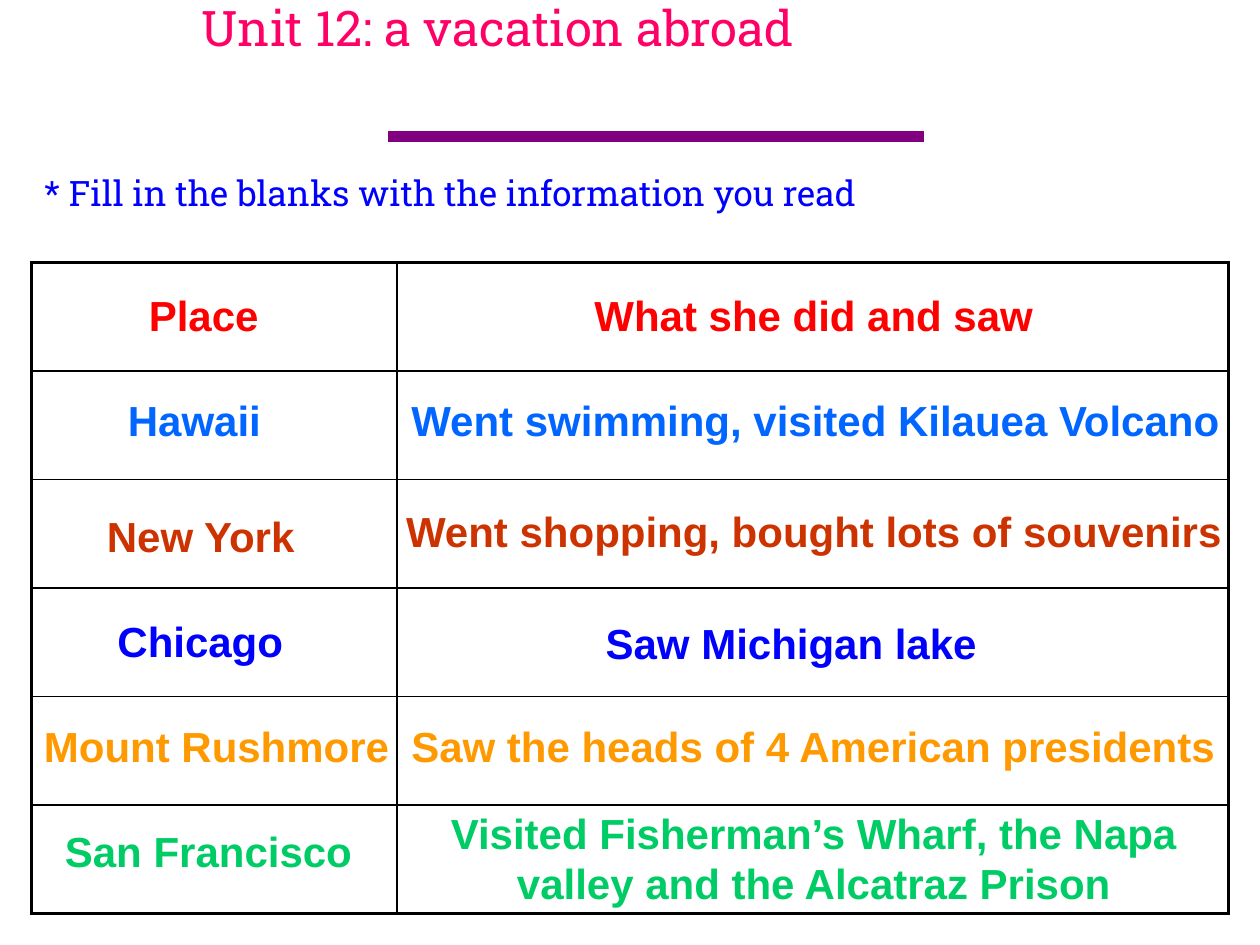
"""Build the worksheet slide for Unit 12, a vacation abroad."""
from lxml.etree import SubElement
from pptx import Presentation
from pptx.dml.color import RGBColor
from pptx.enum.shapes import MSO_CONNECTOR
from pptx.enum.text import MSO_ANCHOR as Anchor, MSO_AUTO_SIZE as AutoSize, PP_ALIGN as Align
from pptx.oxml.ns import qn
from pptx.util import Inches, Pt

PINK = RGBColor(0xFF, 0x00, 0x66)
PURPLE = RGBColor(0x80, 0x00, 0x80)
BLUE = RGBColor(0x00, 0x00, 0xFF)
RED = RGBColor(0xFF, 0x00, 0x00)
SKY = RGBColor(0x00, 0x66, 0xFF)
RUST = RGBColor(0xCC, 0x33, 0x00)
ORANGE = RGBColor(0xFF, 0x99, 0x00)
GREEN = RGBColor(0x00, 0xCC, 0x66)
BLACK = RGBColor(0x00, 0x00, 0x00)

GRID_COLUMNS, GRID_ROWS = 120, 90
LEFT, CENTER = Align.LEFT, Align.CENTER

ENTRIES = [
    ("Place", RED, (13, 27, 19, 6), LEFT),
    ("What she did and saw", RED, (40, 27, 75, 6), CENTER),
    ("Hawaii", SKY, (11, 37, 16, 6), LEFT),
    ("Went swimming, visited Kilauea Volcano", SKY, (38, 37, 81, 6), LEFT),
    ("New York", RUST, (9, 48, 21, 6), LEFT),
    ("Went shopping, bought lots of souvenirs", RUST, (37.5, 47.6, 83, 6), LEFT),
    ("Chicago", BLUE, (10, 58, 32, 6), LEFT),
    ("Saw Michigan lake", BLUE, (56.5, 58.2, 51, 6), LEFT),
    ("Mount Rushmore", ORANGE, (3, 68, 38, 6), LEFT),
    ("Saw the heads of 4 American presidents", ORANGE, (38, 68, 83, 6), LEFT),
    ("San Francisco", GREEN, (5, 78, 34, 6), LEFT),
    ("Visited Fisherman’s Wharf, the Napa valley and the Alcatraz Prison",
     GREEN, (37, 76.3, 81, 10.8), CENTER),
]


def write(shape, text, *, color, size=24, font="Arial", bold=True, align=LEFT):
    """Fill a shape with one formatted paragraph."""
    frame = shape.text_frame
    frame.word_wrap = True
    frame.auto_size = AutoSize.NONE
    frame.vertical_anchor = Anchor.TOP
    para = frame.paragraphs[0]
    para.alignment = align
    span = para.add_run()
    span.text = text
    span.font.name, span.font.size, span.font.bold = font, Pt(size), bold
    span.font.color.rgb = color


def draw_border(cell, side, width):
    """Draw one side of a table cell."""
    line = SubElement(cell._tc.get_or_add_tcPr(), qn(f"a:ln{side}"), w=str(Pt(width)))
    fill = SubElement(line, qn("a:solidFill"))
    SubElement(fill, qn("a:srgbClr"), val=str(BLACK))


class Worksheet:
    """Hold the deck, its grid and the current page."""

    heading_font = "Roboto Slab"
    thick, thin = 2.25, 1

    def __init__(self):
        """Open a deck with one title-only page."""
        self.deck = Presentation()
        self.deck.slide_width, self.deck.slide_height = Inches(10), Inches(7.5)
        self.page = self.deck.slides.add_slide(self.deck.slide_layouts[5])

    def across(self, columns):
        """Turn grid columns into a length."""
        return round(self.deck.slide_width * columns / GRID_COLUMNS)

    def down(self, rows):
        """Turn grid rows into a length."""
        return round(self.deck.slide_height * rows / GRID_ROWS)

    def area(self, left, top, width, height):
        """Turn a grid area into lengths."""
        return self.across(left), self.down(top), self.across(width), self.down(height)

    def title(self, text, area, color):
        """Move and fill the title placeholder."""
        box = self.page.shapes.title
        box.left, box.top, box.width, box.height = self.area(*area)
        write(box, text, color=color, size=28, font=self.heading_font, bold=False)

    def text(self, text, area, **style):
        """Add a text box."""
        write(self.page.shapes.add_textbox(*self.area(*area)), text, **style)

    def rule(self, left, right, row, color, width):
        """Add a horizontal line."""
        height = self.down(row)
        line = self.page.shapes.add_connector(
            MSO_CONNECTOR.STRAIGHT, self.across(left), height, self.across(right), height)
        line.line.color.rgb, line.line.width = color, Pt(width)
        SubElement(line._element.spPr, qn("a:effectLst"))

    def table(self, area, widths, row_count):
        """Add an empty ruled table with a thick outline."""
        last_row, last_column = row_count - 1, len(widths) - 1
        grid = self.page.shapes.add_table(row_count, len(widths), *self.area(*area)).table
        grid.first_row = grid.horz_banding = False
        for column, width in zip(grid.columns, widths):
            column.width = self.across(width)
        for row in range(row_count):
            for column in range(len(widths)):
                cell = grid.cell(row, column)
                outer = {"L": column == 0, "R": column == last_column,
                         "T": row == 0, "B": row == last_row}
                for side, is_outer in outer.items():
                    draw_border(cell, side, self.thick if is_outer else self.thin)
                cell.fill.background()


def main():
    """Build and save the worksheet."""
    sheet = Worksheet()
    sheet.title("Unit 12: a vacation abroad", (18, -0.8, 92, 6.8), PINK)
    sheet.rule(37, 88, 13, PURPLE, 6)
    sheet.text("* Fill in the blanks with the information you read", (3, 15.7, 115.2, 5.2),
               color=BLUE, size=20, font=sheet.heading_font, bold=False)
    sheet.table((3, 25, 114, 62), (34.8, 79.2), len(ENTRIES) // 2)
    for text, color, area, align in ENTRIES:
        sheet.text(text, area, color=color, align=align)
    sheet.deck.save("out.pptx")


if __name__ == "__main__":
    main()
